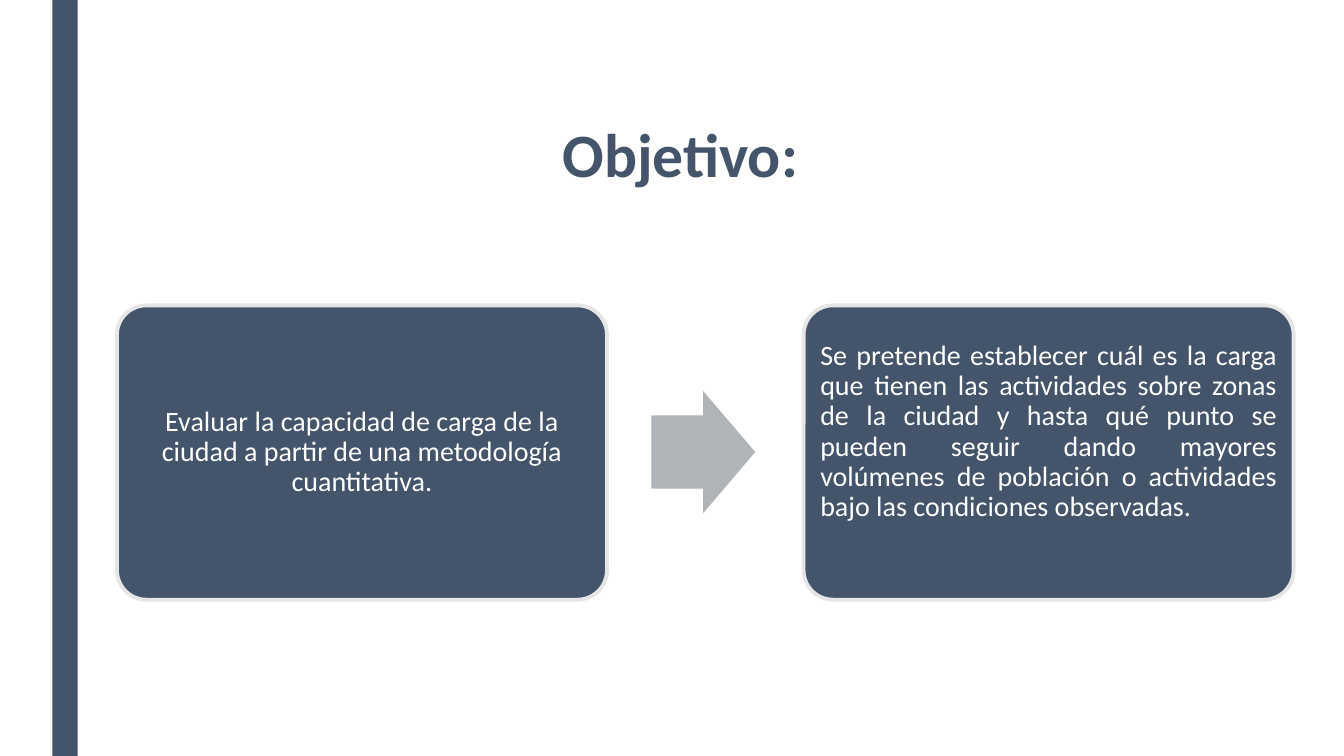
"""Build the objective slide: two cards joined by an arrow."""
from dataclasses import dataclass

from pptx import Presentation
from pptx import util as u
from pptx.dml.color import RGBColor
from pptx.enum import shapes, text
from pptx.shapes.autoshape import Shape
from pptx.slide import Slide
from pptx.text.text import TextFrame

WIDTH, HEIGHT = u.Inches(13.33), u.Inches(7.5)


@dataclass(frozen=True)
class Theme:
    """Colours, font and type sizes of the slide."""
    navy: RGBColor = RGBColor.from_string("44546A")
    border: RGBColor = RGBColor.from_string("E7E6E6")
    arrow: RGBColor = RGBColor.from_string("B0B4B9")
    white: RGBColor = RGBColor.from_string("FFFFFF")
    font: str = "Calibri"
    title: int = 44
    body: int = 20
    spacing: float = 0.9


@dataclass(frozen=True)
class Box:
    """A rectangle in percent of the slide's width and height."""
    x: float
    y: float
    w: float
    h: float

    def emu(self) -> tuple[int, int, int, int]:
        """Return left, top, width and height in EMU."""
        return (int(WIDTH * self.x / 100), int(HEIGHT * self.y / 100),
                int(WIDTH * self.w / 100), int(HEIGHT * self.h / 100))


@dataclass(frozen=True)
class Card:
    """Wording of a card, its alignment and bottom inset in inches."""
    words: str
    align: text.PP_ALIGN
    bottom: float


THEME = Theme()
BAR = Box(3.9, 0, 1.88, 100)
TITLE = Box(11.25, 10, 78.75, 21.6)
FIRST_CARD = Box(8.7, 40.4, 36.46, 38.93)
CARD_PITCH = 51.09
ARROW = Box(48.46, 51.73, 7.73, 16.13)
INSET = 0.08
CARDS = (
    Card("Evaluar la capacidad de carga de la ciudad a partir de una "
         "metodología cuantitativa.", text.PP_ALIGN.CENTER, INSET),
    Card("Se pretende establecer cuál es la carga que tienen las actividades "
         "sobre zonas de la ciudad y hasta qué punto se pueden seguir dando "
         "mayores volúmenes de población o actividades bajo las condiciones "
         "observadas.", text.PP_ALIGN.JUSTIFY, 0.49),
)


def add_block(s: Slide, kind: shapes.MSO_SHAPE, box: Box, fill: RGBColor,
              *adjustments: float) -> Shape:
    """Add a flat shape without outline."""
    sp = s.shapes.add_shape(kind, *box.emu())
    sp.shadow.inherit = False
    sp.fill.solid()
    sp.fill.fore_color.rgb = fill
    sp.line.fill.background()
    for i, value in enumerate(adjustments):
        sp.adjustments[i] = value
    return sp


def write(tf: TextFrame, words: str, size: int, color: RGBColor,
          align: text.PP_ALIGN, bold: bool = False) -> None:
    """Fill a text frame with one formatted paragraph."""
    tf.text = words
    tf.word_wrap = True
    tf.vertical_anchor = text.MSO_ANCHOR.MIDDLE
    p = tf.paragraphs[0]
    p.alignment = align
    p.line_spacing = THEME.spacing
    font = p.runs[0].font
    font.name, font.size, font.bold = THEME.font, u.Pt(size), bold
    font.color.rgb = color


def add_title(s: Slide) -> None:
    """Place and format the slide title."""
    sp = s.shapes.title
    sp.left, sp.top, sp.width, sp.height = TITLE.emu()
    write(sp.text_frame, "Objetivo:", THEME.title, THEME.navy,
          text.PP_ALIGN.CENTER, bold=True)


def add_card(s: Slide, card: Card, column: int) -> None:
    """Add a rounded card in the given column."""
    box = Box(FIRST_CARD.x + column * CARD_PITCH, FIRST_CARD.y,
              FIRST_CARD.w, FIRST_CARD.h)
    sp = add_block(s, shapes.MSO_SHAPE.ROUNDED_RECTANGLE, box, THEME.navy, 0.1)
    sp.line.color.rgb = THEME.border
    sp.line.width = u.Pt(2.75)
    tf = sp.text_frame
    tf.margin_left = tf.margin_right = tf.margin_top = u.Inches(INSET)
    tf.margin_bottom = u.Inches(card.bottom)
    write(tf, card.words, THEME.body, THEME.white, card.align)


def main() -> None:
    """Build and save the presentation."""
    prs = Presentation()
    prs.slide_width, prs.slide_height = WIDTH, HEIGHT
    s = prs.slides.add_slide(prs.slide_layouts.get_by_name("Title Only"))
    add_block(s, shapes.MSO_SHAPE.RECTANGLE, BAR, THEME.navy)
    add_title(s)
    for column, card in enumerate(CARDS):
        add_card(s, card, column)
    add_block(s, shapes.MSO_SHAPE.RIGHT_ARROW, ARROW, THEME.arrow, 0.6, 0.5)
    prs.save("out.pptx")


if __name__ == "__main__":
    main()
